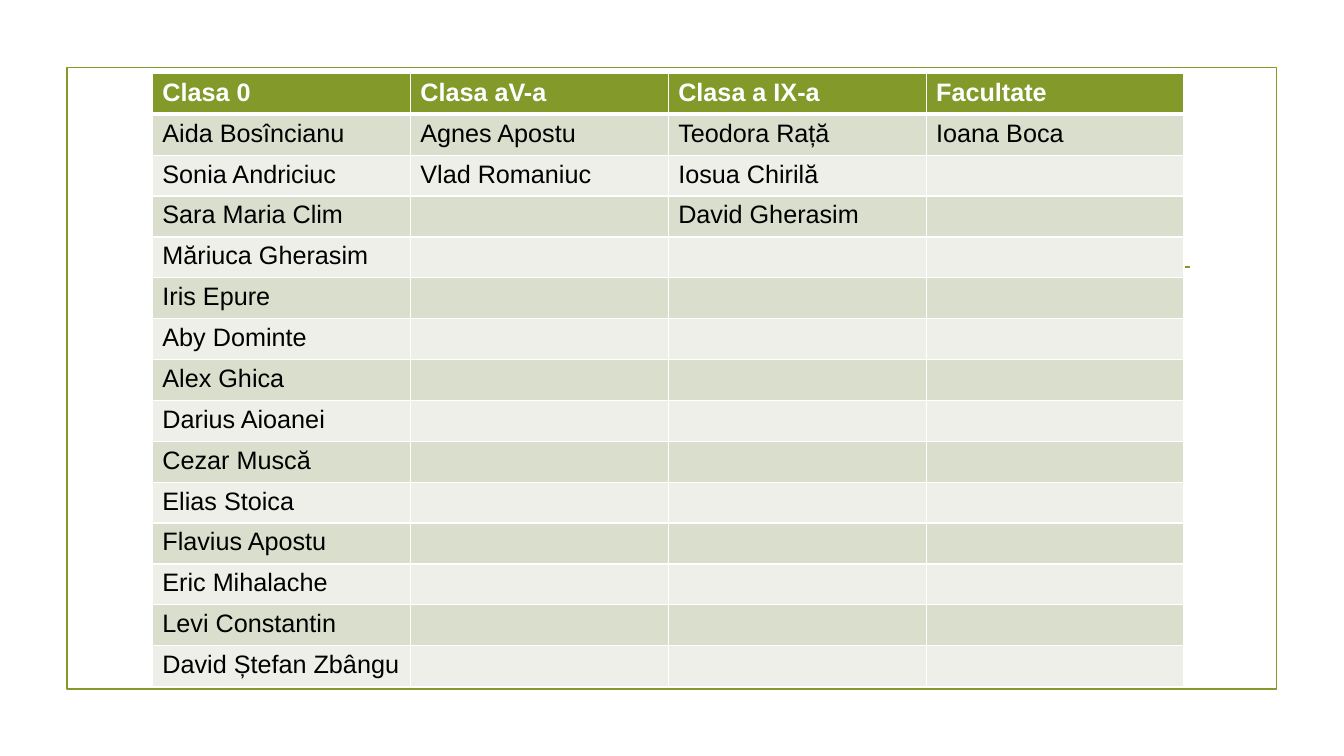
from dataclasses import dataclass

from lxml.etree import SubElement
from pptx import Presentation
from pptx.dml.color import RGBColor
from pptx.enum.shapes import MSO_CONNECTOR as CONN, MSO_SHAPE as SHAPE
from pptx.oxml.ns import qn
from pptx.util import Cm, Pt

GREEN = RGBColor(0x83, 0x99, 0x2A)
WHITE = RGBColor(0xFF, 0xFF, 0xFF)
BLACK = RGBColor(0x00, 0x00, 0x00)
BAND_DARK = RGBColor(0xD9, 0xDE, 0xCD)
BAND_LIGHT = RGBColor(0xED, 0xEF, 0xE8)
COL_W, ROW_H = Cm(6.5), Cm(1.03)


@dataclass
class SchoolClass:
    title: str
    pupils: list[str]


@dataclass
class RowStyle:
    fill: RGBColor
    color: RGBColor
    bold: bool
    top: int
    bottom: int


CLASSES = [
    SchoolClass("Clasa 0", [
        "Aida Bosîncianu", "Sonia Andriciuc", "Sara Maria Clim",
        "Măriuca Gherasim", "Iris Epure", "Aby Dominte", "Alex Ghica",
        "Darius Aioanei", "Cezar Muscă", "Elias Stoica", "Flavius Apostu",
        "Eric Mihalache", "Levi Constantin", "David Ștefan Zbângu"]),
    SchoolClass("Clasa aV-a", ["Agnes Apostu", "Vlad Romaniuc"]),
    SchoolClass("Clasa a IX-a",
                ["Teodora Rață", "Iosua Chirilă", "David Gherasim"]),
    SchoolClass("Facultate", ["Ioana Boca"]),
]


def row_style(row: int) -> RowStyle:
    if row == 0:
        return RowStyle(GREEN, WHITE, True, 1, 3)
    band = BAND_DARK if row % 2 else BAND_LIGHT
    return RowStyle(band, BLACK, False, 3 if row == 1 else 1, 1)


def set_borders(cell, top: int, bottom: int) -> None:
    tc_pr = cell._tc.get_or_add_tcPr()
    for side, width in (("L", 1), ("R", 1), ("T", top), ("B", bottom)):
        ln = SubElement(tc_pr, qn(f"a:ln{side}"), w=str(Pt(width)))
        fill = SubElement(ln, qn("a:solidFill"))
        SubElement(fill, qn("a:srgbClr"), val=str(WHITE))


def fill_cell(cell, text: str, style: RowStyle) -> None:
    set_borders(cell, style.top, style.bottom)
    cell.fill.solid()
    cell.fill.fore_color.rgb = style.fill
    cell.text = text
    font = cell.text_frame.paragraphs[0].font
    font.name, font.size, font.bold = "Arial", Pt(18), style.bold
    font.color.rgb = style.color


def add_class_table(s, classes: list[SchoolClass]) -> None:
    rows = 1 + max(len(c.pupils) for c in classes)
    table = s.shapes.add_table(rows, len(classes), Cm(3.84), Cm(1.85),
                               COL_W * len(classes), ROW_H * rows).table
    for row in table.rows:
        row.height = ROW_H
    for col, school_class in enumerate(classes):
        table.columns[col].width = COL_W
        texts = [school_class.title, *school_class.pupils]
        texts += [""] * (rows - len(texts))
        for row, text in enumerate(texts):
            fill_cell(table.cell(row, col), text, row_style(row))


def set_line(shape) -> None:
    shape.line.color.rgb = GREEN
    shape.line.width = Pt(1.25)


def main() -> None:
    prs = Presentation()
    prs.slide_width, prs.slide_height = Cm(33.87), Cm(19.05)
    s = prs.slides.add_slide(prs.slide_layouts[6])

    # Green frame
    frame = s.shapes.add_shape(SHAPE.RECTANGLE, Cm(1.69), Cm(1.7),
                               Cm(30.48), Cm(15.67))
    frame.shadow.inherit = False
    frame.fill.background()
    set_line(frame)

    # Rule behind the table
    rule = s.shapes.add_connector(CONN.STRAIGHT, Cm(3.89), Cm(6.73),
                                  Cm(30), Cm(6.73))
    SubElement(rule._element.spPr, qn("a:effectLst"))
    set_line(rule)

    # Pupils by class
    add_class_table(s, CLASSES)
    prs.save("out.pptx")


if __name__ == "__main__":
    main()
